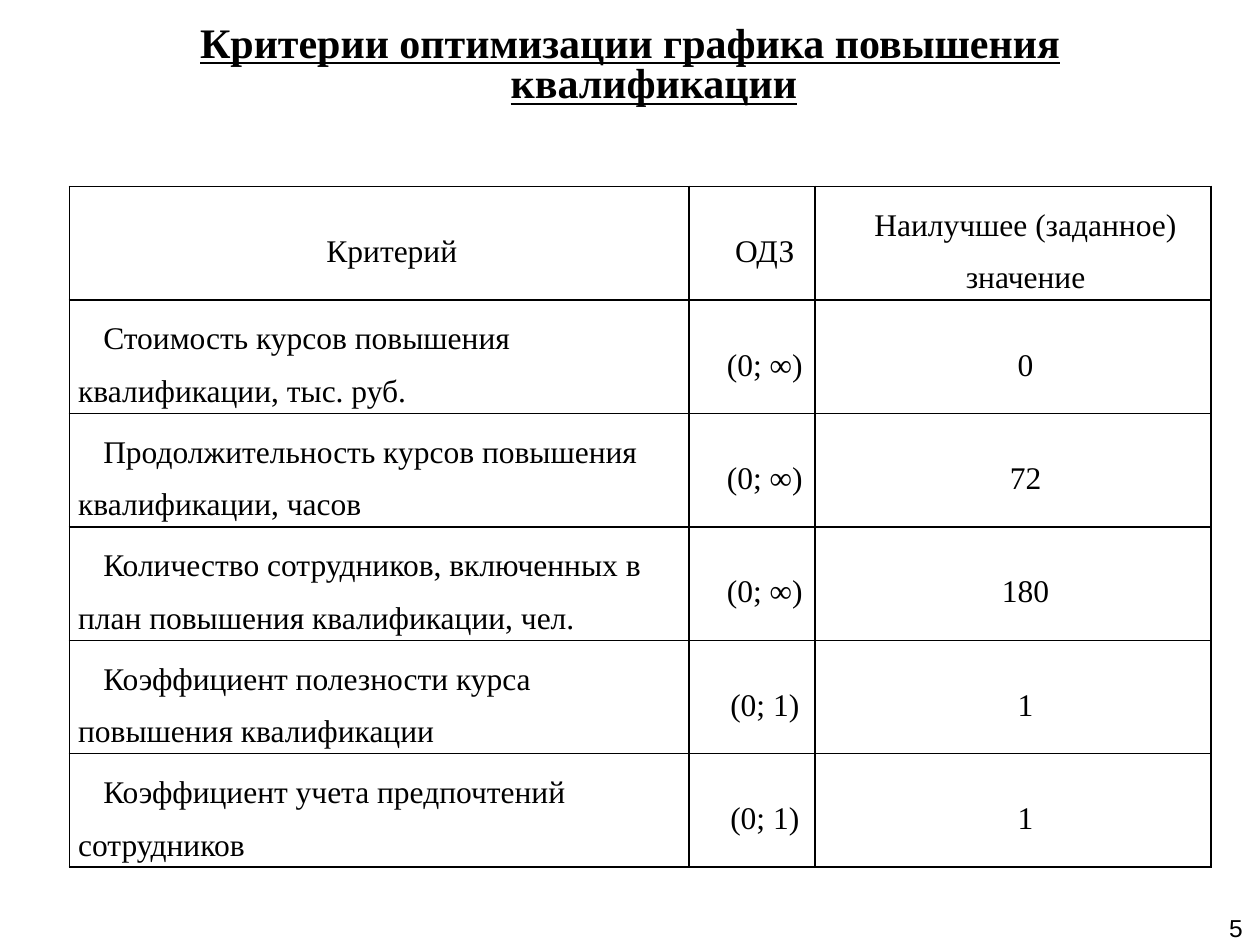
from lxml.etree import SubElement
from pptx import Presentation
from pptx.dml.color import RGBColor
from pptx.enum.text import MSO_ANCHOR, MSO_AUTO_SIZE, PP_ALIGN
from pptx.oxml.ns import qn
from pptx.util import Inches, Pt

TITLE = "Критерии оптимизации графика повышения квалификации"
PAGE = "5"
ROWS = [
    ("Критерий", "ОДЗ", "Наилучшее (заданное)\nзначение"),
    ("Стоимость курсов повышения квалификации, тыс. руб.", "(0; ∞)", "0"),
    ("Продолжительность курсов повышения квалификации, часов", "(0; ∞)", "72"),
    ("Количество сотрудников, включенных в план повышения квалификации, чел.",
     "(0; ∞)", "180"),
    ("Коэффициент полезности курса повышения квалификации", "(0; 1)", "1"),
    ("Коэффициент учета предпочтений сотрудников", "(0; 1)", "1"),
]
COL_WIDTHS = (4.92, 1, 3.14)
ROW_HEIGHT = 0.9
COLORS = {"ink": "000000"}
SERIF = "Times New Roman"
TITLE_FONT = {"name": SERIF, "size": Pt(24), "bold": True, "underline": True}
PAGE_FONT = {"name": "Arial", "size": Pt(14)}
CELL_FONT = {"name": SERIF, "size": Pt(18)}


def set_attrs(obj, values):
    for name, value in values.items():
        setattr(obj, name, value)


def write(tf, text, font, align, spacing=1.0, margin=0, indent=0):
    """Fill a text frame, one paragraph a line; margin and indent in inches."""
    for i, line in enumerate(text.split("\n")):
        p = tf.paragraphs[0] if i == 0 else tf.add_paragraph()
        set_attrs(p, {"alignment": align, "line_spacing": spacing})
        pPr = p._p.get_or_add_pPr()
        pPr.set("marL", str(Inches(margin)))
        pPr.set("indent", str(Inches(indent)))
        r = p.add_run()
        r.text = line
        set_attrs(r.font, font)
        r.font.color.rgb = RGBColor.from_string(COLORS["ink"])


def add_text(s, box, frame, *args, **kwargs):
    tf = s.shapes.add_textbox(*map(Inches, box)).text_frame
    set_attrs(tf, frame)
    write(tf, *args, **kwargs)


def add_borders(cell):
    tcPr = cell._tc.get_or_add_tcPr()
    for i, side in enumerate(("lnL", "lnR", "lnT", "lnB")):
        ln = tcPr.makeelement(qn(f"a:{side}"), {"w": str(Pt(1))})
        fill = SubElement(ln, qn("a:solidFill"))
        SubElement(fill, qn("a:srgbClr"), val=COLORS["ink"])
        tcPr.insert(i, ln)


def add_criteria_table(s):
    frame = s.shapes.add_table(
        len(ROWS), len(COL_WIDTHS), Inches(0.55), Inches(1.48),
        Inches(sum(COL_WIDTHS)), Inches(ROW_HEIGHT * len(ROWS)))
    table = frame.table
    set_attrs(table, {"first_row": False, "horz_banding": False})
    for column, width in zip(table.columns, COL_WIDTHS):
        column.width = Inches(width)
    for i, row in enumerate(ROWS):
        table.rows[i].height = Inches(ROW_HEIGHT)
        for j, text in enumerate(row):
            cell = table.cell(i, j)
            set_attrs(cell, {
                "vertical_anchor": MSO_ANCHOR.MIDDLE,
                "margin_left": Inches(0.07), "margin_right": Inches(0.07),
                "margin_top": 0, "margin_bottom": 0})
            cell.fill.background()
            add_borders(cell)
            align = PP_ALIGN.LEFT if i and j == 0 else PP_ALIGN.CENTER
            write(cell.text_frame, text, CELL_FONT, align, 1.5, indent=0.2)


prs = Presentation()
prs.slide_width, prs.slide_height = Inches(10), Inches(7.5)
s = prs.slides.add_slide(prs.slide_layouts[6])
add_text(s, (0.5, 0.3, 9, 0.46),
         {"word_wrap": True, "vertical_anchor": MSO_ANCHOR.MIDDLE},
         TITLE, TITLE_FONT, PP_ALIGN.CENTER, 0.8, margin=0.38, indent=-0.38)
add_text(s, (9.65, 7.2, 0.32, 0.33),
         {"word_wrap": True, "margin_left": 0, "margin_right": 0,
          "auto_size": MSO_AUTO_SIZE.SHAPE_TO_FIT_TEXT},
         PAGE, PAGE_FONT, PP_ALIGN.CENTER)
add_criteria_table(s)
prs.save("out.pptx")
